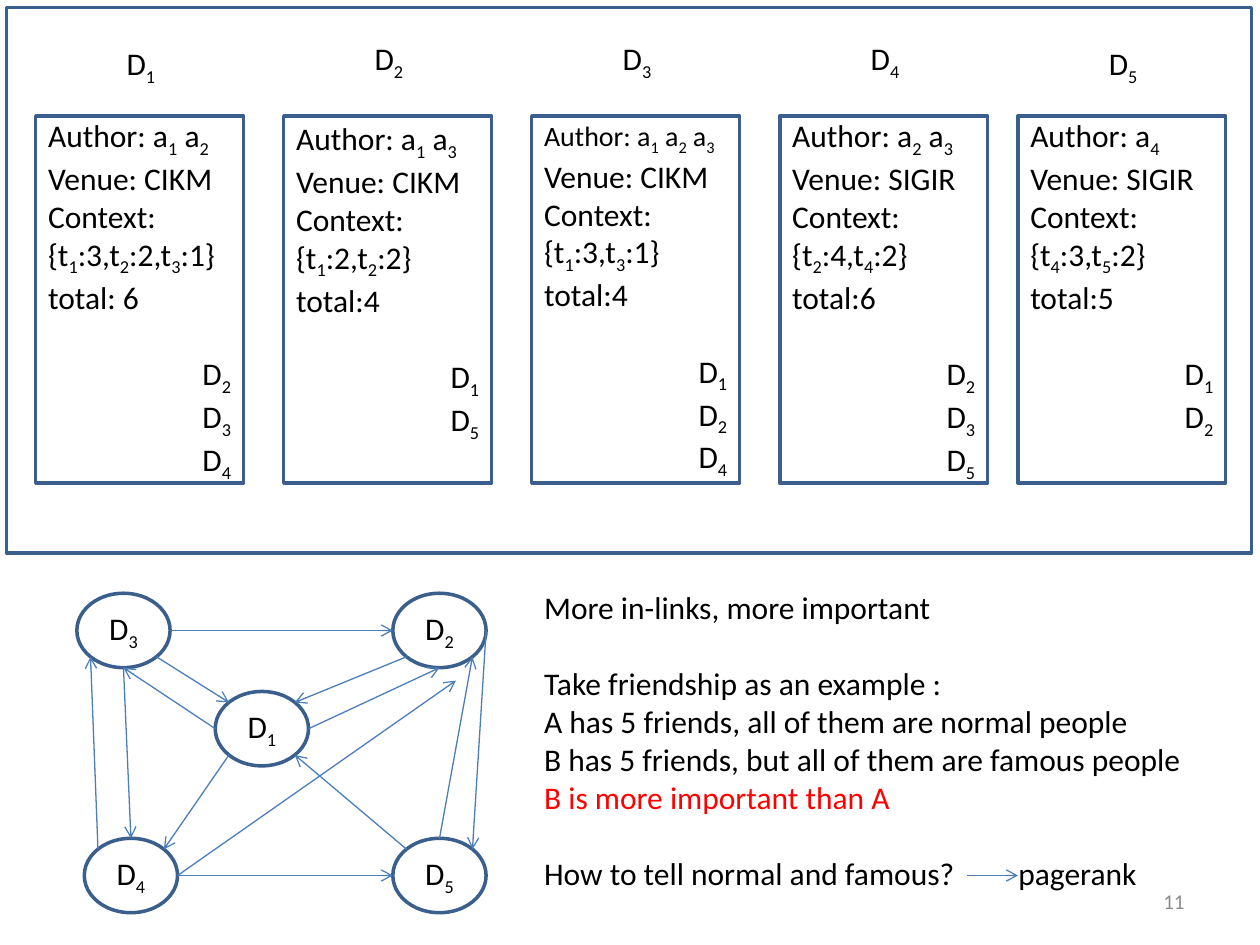
"""Build the slide on document links and the importance of in-links."""
import math

import pptx
import pptx.dml.color
import pptx.enum.shapes
import pptx.enum.text
import pptx.oxml
import pptx.oxml.ns
import pptx.util
from pptx.util import Cm

COLORS = {"border": "3A5F8C", "arrow": "4B7EBC", "text": "000000",
          "accent": "FF0000", "number": "8C8C8C"}
ALIGN = pptx.enum.text.PP_ALIGN
ANCHOR = pptx.enum.text.MSO_ANCHOR
SHAPE = pptx.enum.shapes.MSO_SHAPE
LINE_PT = 22

DOCUMENTS = [
    {"name": "D_1", "x": 0.72, "label_y": 0.76, "inset": 0, "size": 18,
     "facts": ["Author: a_1 a_2", "Venue: CIKM", "Context:",
               "{t_1:3,t_2:2,t_3:1}", "total: 6"],
     "links": ["D_2", "D_3", "D_4"]},
    {"name": "D_2", "x": 5.72, "label_y": 0.66, "inset": 0.06, "size": 18,
     "facts": ["Author: a_1 a_3", "Venue: CIKM", "Context:",
               "{t_1:2,t_2:2}", "total:4"],
     "links": ["D_1", "D_5"]},
    {"name": "D_3", "x": 10.72, "label_y": 0.66, "inset": 0.05, "size": 16,
     "facts": ["Author: a_1 a_2 a_3", "Venue: CIKM", "Context:",
               "{t_1:3,t_3:1}", "total:4"],
     "links": ["D_1", "D_2", "D_4"]},
    {"name": "D_4", "x": 15.72, "label_y": 0.66, "inset": 0, "size": 18,
     "facts": ["Author: a_2 a_3", "Venue: SIGIR", "Context:",
               "{t_2:4,t_4:2}", "total:6"],
     "links": ["D_2", "D_3", "D_5"]},
    {"name": "D_5", "x": 20.52, "label_y": 0.76, "inset": 0, "size": 18,
     "facts": ["Author: a_4", "Venue: SIGIR", "Context:",
               "{t_4:3,t_5:2}", "total:5"],
     "links": ["D_1", "D_2"]},
]
CARD_Y, CARD_W, CARD_H = 2.34, 4.19, 7.4

NODES = {"D_1": (4.34, 13.94), "D_2": (7.92, 11.96), "D_3": (1.55, 11.96),
         "D_4": (1.7, 16.9), "D_5": (7.92, 16.9)}
NODE_W, NODE_H = 1.88, 1.5
SITES = ["top", "top left", "left", "bottom left",
         "bottom", "bottom right", "right", "top right"]
EDGES = [
    ("D_2", "bottom left", "D_1", "top right"),
    ("D_3", "bottom right", "D_1", "top left"),
    ("D_5", "top left", "D_1", "bottom right"),
    ("D_1", "right", "D_2", "bottom"),
    ("D_3", "right", "D_2", "left"),
    ("D_5", "top", "D_2", "bottom right"),
    ("D_1", "left", "D_3", "bottom"),
    ("D_4", "top left", "D_3", "bottom left"),
    ("D_1", "bottom left", "D_4", "top right"),
    ("D_3", "bottom", "D_4", "top"),
    ("D_2", "right", "D_5", "top right"),
    ("D_4", "right", "D_5", "left"),
]
LOOSE_END = (9.19, 13.72)

NOTES = [
    {"text": "More in-links, more important"},
    {"text": "Take friendship as an example :", "before": LINE_PT},
    {"text": "A has 5 friends, all of them are normal people"},
    {"text": "B has 5 friends, but all of them are famous people"},
    {"text": "B is more important than A", "color": "accent"},
    {"text": "How to tell normal and famous?\tpagerank", "before": LINE_PT},
]
PAGERANK_TAB = 9.56
PAGERANK_ARROW = ((19.5, 17.65), (20.52, 17.65))


def rgb(name):
    return pptx.dml.color.RGBColor.from_string(COLORS[name])


def write_line(p, text, size=18, color="text", align=ALIGN.LEFT, before=0):
    """Write a line in which an underscore lowers the next character."""
    head, *tails = text.split("_")
    pieces = [(head, False)]
    for tail in tails:
        pieces += [(tail[0], True), (tail[1:], False)]
    for piece, lowered in pieces:
        if piece:
            r = p.add_run()
            r.text = piece
            r.font.name, r.font.size = "Calibri", pptx.util.Pt(size)
            r.font.color.rgb = rgb(color)
            if lowered:
                r._r.get_or_add_rPr().set("baseline", "-25000")
    p.alignment = align
    if before:
        p.space_before = pptx.util.Pt(before)


def write(tf, lines):
    for i, line in enumerate(lines):
        p = tf.add_paragraph() if i else tf.paragraphs[0]
        write_line(p, **line)


def add_text(shapes, x, y, w, h, lines, anchor=ANCHOR.TOP, wrap=False):
    tf = shapes.add_textbox(Cm(x), Cm(y), Cm(w), Cm(h)).text_frame
    tf.word_wrap, tf.vertical_anchor = wrap, anchor
    write(tf, lines)
    return tf


def add_outline(shapes, kind, x, y, w, h):
    sp = shapes.add_shape(kind, Cm(x), Cm(y), Cm(w), Cm(h))
    sp.shadow.inherit = False
    sp.fill.background()
    sp.line.color.rgb = rgb("border")
    sp.line.width = pptx.util.Pt(2)
    return sp


def add_arrow(shapes, start, end):
    line = shapes.add_connector(pptx.enum.shapes.MSO_CONNECTOR.STRAIGHT,
                                *[Cm(v) for v in (*start, *end)])
    line.line.color.rgb = rgb("arrow")
    line.line.width = pptx.util.Pt(0.75)
    ns = pptx.oxml.ns.nsdecls("a")
    line.line._get_or_add_ln().append(
        pptx.oxml.parse_xml(f'<a:tailEnd {ns} type="arrow"/>'))
    line._element.spPr.append(pptx.oxml.parse_xml(f"<a:effectLst {ns}/>"))


def node_site(name, site):
    x, y = NODES[name]
    angle = math.radians(90 + 45 * SITES.index(site))
    return (x + NODE_W / 2 * (1 + math.cos(angle)),
            y + NODE_H / 2 * (1 - math.sin(angle)))


def add_documents(shapes):
    for doc in DOCUMENTS:
        tf = add_outline(shapes, SHAPE.RECTANGLE, doc["x"], CARD_Y,
                         CARD_W, CARD_H).text_frame
        tf.word_wrap, tf.vertical_anchor = True, ANCHOR.TOP
        tf.margin_top, tf.margin_bottom = Cm(doc["inset"]), 0
        facts = [{"text": t} for t in doc["facts"]]
        facts[0]["size"] = doc["size"]
        links = [{"text": t, "align": ALIGN.RIGHT} for t in doc["links"]]
        links[0]["before"] = LINE_PT
        write(tf, facts + links)
        add_text(shapes, doc["x"] + 1.54, doc["label_y"], 1.12, 1.02,
                 [{"text": doc["name"], "align": ALIGN.RIGHT}])
    add_outline(shapes, SHAPE.RECTANGLE, 0.13, 0.15, 25.1, 11)


def add_graph(shapes):
    for name, (x, y) in NODES.items():
        tf = add_outline(shapes, SHAPE.OVAL, x, y, NODE_W, NODE_H).text_frame
        tf.margin_left = tf.margin_right = 0
        tf.vertical_anchor = ANCHOR.MIDDLE
        write(tf, [{"text": name, "align": ALIGN.CENTER}])
    for source, leave, target, arrive in EDGES:
        add_arrow(shapes, node_site(source, leave), node_site(target, arrive))
    add_arrow(shapes, node_site("D_4", "right"), LOOSE_END)


def main():
    prs = pptx.Presentation()
    prs.slide_width, prs.slide_height = Cm(25.4), Cm(19.05)
    s = prs.slides.add_slide(prs.slide_layouts[6])
    add_text(s.shapes, 18.2, 17.66, 5.93, 1.01,
             [{"text": "11", "size": 12, "color": "number",
               "align": ALIGN.RIGHT}], ANCHOR.MIDDLE, True)
    add_documents(s.shapes.add_group_shape().shapes)
    add_graph(s.shapes.add_group_shape().shapes)
    tf = add_text(s.shapes, 10.72, 11.73, 13.5, 7.19, NOTES)
    tf.paragraphs[-1]._p.get_or_add_pPr().append(pptx.oxml.parse_xml(
        f'<a:tabLst {pptx.oxml.ns.nsdecls("a")}>'
        f'<a:tab pos="{Cm(PAGERANK_TAB)}" algn="l"/></a:tabLst>'))
    add_arrow(s.shapes, *PAGERANK_ARROW)
    prs.save("out.pptx")


if __name__ == "__main__":
    main()
